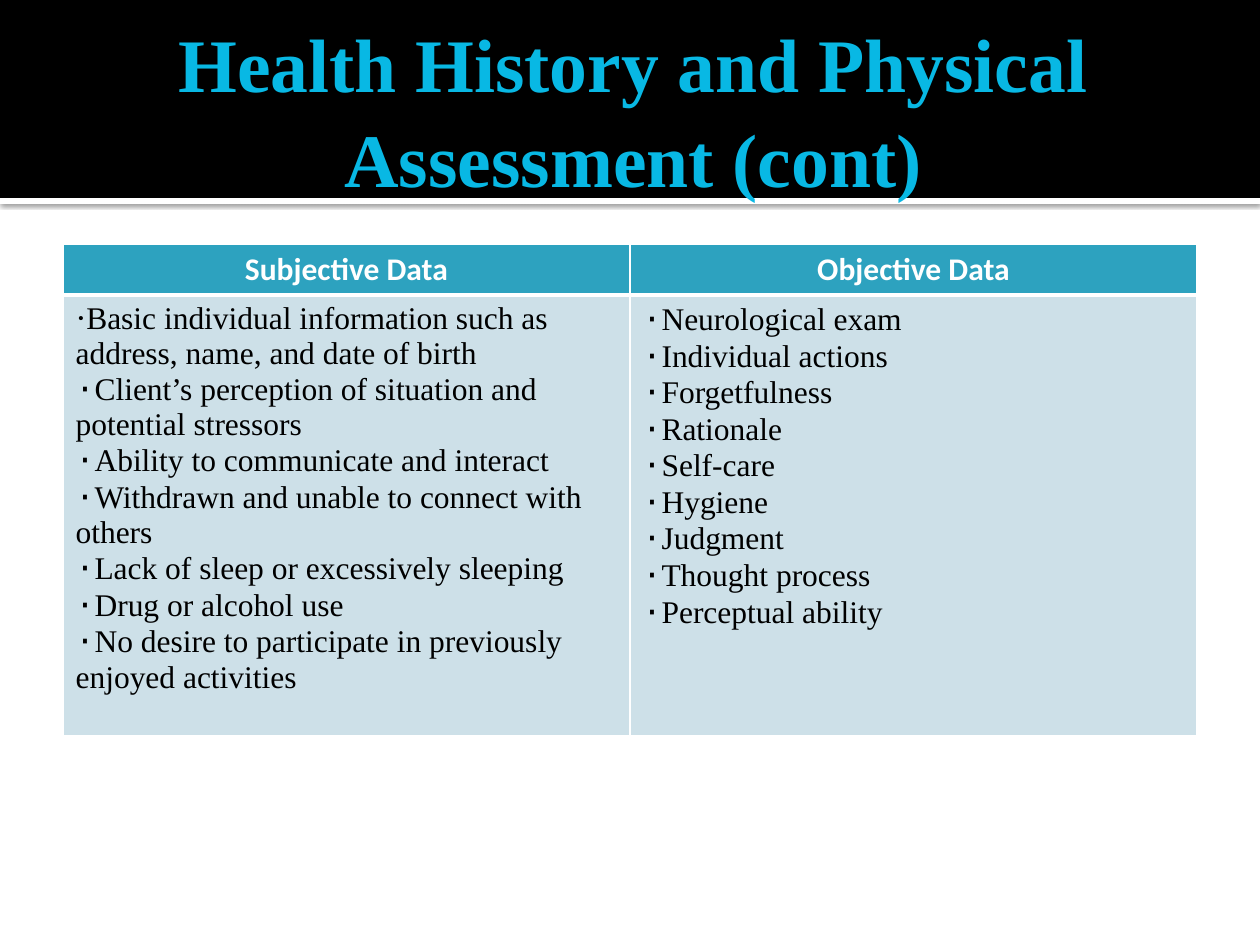
from lxml import etree
from pptx import Presentation
from pptx.dml.color import RGBColor
from pptx.enum.shapes import MSO_SHAPE as SHAPE
from pptx.enum.text import MSO_ANCHOR as ANCHOR, PP_ALIGN as ALIGN
from pptx.oxml import parse_xml
from pptx.oxml.ns import nsdecls, qn
from pptx.util import Emu, Pt

PX = 914400 / 126
WHITE = RGBColor(0xFF, 0xFF, 0xFF)
BLACK = RGBColor(0, 0, 0)
CYAN = RGBColor(0x08, 0xB8, 0xE4)
TEAL = RGBColor(0x2D, 0xA2, 0xBF)
PALE = RGBColor(0xCD, 0xE0, 0xE8)
SERIF, SANS, MONO = "Times New Roman", "Calibri", "DejaVu Sans Mono"
DOT = "⋅"

SUBJECTIVE = [
    "Basic individual information such as address, name, and date of birth",
    "Client’s perception of situation and potential stressors",
    "Ability to communicate and interact",
    "Withdrawn and unable to connect with others",
    "Lack of sleep or excessively sleeping",
    "Drug or alcohol use",
    "No desire to participate in previously enjoyed activities",
]
OBJECTIVE = [
    "Neurological exam", "Individual actions", "Forgetfulness", "Rationale", "Self-care",
    "Hygiene", "Judgment", "Thought process", "Perceptual ability",
]


def px(n):
    """Turn pixels into EMU."""
    return Emu(round(n * PX))


class Deck:
    """Holds the style and the current slide."""

    def __init__(self, width, height):
        """Start a presentation with one title-only slide."""
        self.prs = Presentation()
        self.prs.slide_width, self.prs.slide_height = px(width), px(height)
        self.s = self.prs.slides.add_slide(self.prs.slide_layouts[5])

    def style(self, r, font, size, color, bold=False):
        """Format one run."""
        r.font.name, r.font.size, r.font.bold = font, Pt(size), bold
        r.font.color.rgb = color

    def band(self, x, y, w, h, color, shadow=False):
        """Add a plain rectangle behind the title."""
        sp = self.s.shapes.add_shape(SHAPE.RECTANGLE, px(x), px(y), px(w), px(h))
        sp.fill.solid()
        sp.fill.fore_color.rgb = color
        sp.line.fill.background()
        sp.shadow.inherit = False
        if shadow:
            sp.element.spPr.find(qn("a:effectLst")).append(parse_xml(
                f'<a:outerShdw {nsdecls("a")} blurRad="{Pt(2.5)}" dist="{Pt(0.8)}" dir="5400000">'
                '<a:srgbClr val="000000"><a:alpha val="60000"/></a:srgbClr></a:outerShdw>'))
        self.s.shapes.title.element.addprevious(sp.element)

    def title(self, x, y, w, h, text):
        """Place and format the title placeholder."""
        sp = self.s.shapes.title
        sp.left, sp.top, sp.width, sp.height = px(x), px(y), px(w), px(h)
        tf = sp.text_frame
        tf.text = text
        tf.word_wrap = True
        tf.vertical_anchor = ANCHOR.MIDDLE
        tf.margin_left, tf.margin_right = Pt(7.2), Pt(3.6)
        p = tf.paragraphs[0]
        p.alignment, p.line_spacing = ALIGN.CENTER, 1.05
        self.style(p.runs[0], SERIF, 43.2, CYAN, True)

    def borders(self, cell, top, bottom):
        """Draw white borders around a cell."""
        tc_pr = cell._tc.get_or_add_tcPr()
        widths = {"lnL": 1, "lnR": 1, "lnT": top, "lnB": bottom}
        for i, (side, width) in enumerate(widths.items()):
            ln = etree.Element(qn(f"a:{side}"), w=str(Pt(width)))
            fill = etree.SubElement(ln, qn("a:solidFill"))
            etree.SubElement(fill, qn("a:srgbClr"), val=str(WHITE))
            tc_pr.insert(i, ln)

    def heading(self, cell, text):
        """Fill a header cell."""
        cell.fill.solid()
        cell.fill.fore_color.rgb = TEAL
        p = cell.text_frame.paragraphs[0]
        p.text, p.alignment = text, ALIGN.CENTER
        self.style(p.runs[0], SANS, 18, WHITE, True)
        self.borders(cell, 1, 3)

    def items(self, cell, lines, first_font):
        """Fill a body cell with dotted lines."""
        cell.fill.solid()
        cell.fill.fore_color.rgb = PALE
        tf = cell.text_frame
        for i, line in enumerate(lines):
            p = tf.add_paragraph() if i else tf.paragraphs[0]
            for text, font in ((DOT, MONO if i else first_font), (line, SERIF)):
                r = p.add_run()
                r.text = text
                self.style(r, font, 18, BLACK)
        self.borders(cell, 3, 1)

    def table(self, x, y, w, heights, columns):
        """Add a table of headed lists."""
        shape = self.s.shapes.add_table(2, len(columns), px(x), px(y), px(w), px(sum(heights)))
        table = shape.table
        for row, height in zip(table.rows, heights):
            row.height = px(height)
        for c, (head, lines, first_font) in enumerate(columns):
            self.heading(table.cell(0, c), head)
            self.items(table.cell(1, c), lines, first_font)


def main():
    """Build the slide and save it."""
    deck = Deck(1260, 945)
    deck.band(0, 198, 1260, 6, WHITE, shadow=True)
    deck.band(0, 0, 1260, 198, BLACK)
    deck.title(63, 21, 1134, 173, "Health History and Physical Assessment (cont)")
    deck.table(63, 244, 1134, (51, 441), [
        ("Subjective Data", SUBJECTIVE, SERIF),
        ("Objective Data", OBJECTIVE, MONO),
    ])
    deck.prs.save("out.pptx")


if __name__ == "__main__":
    main()
